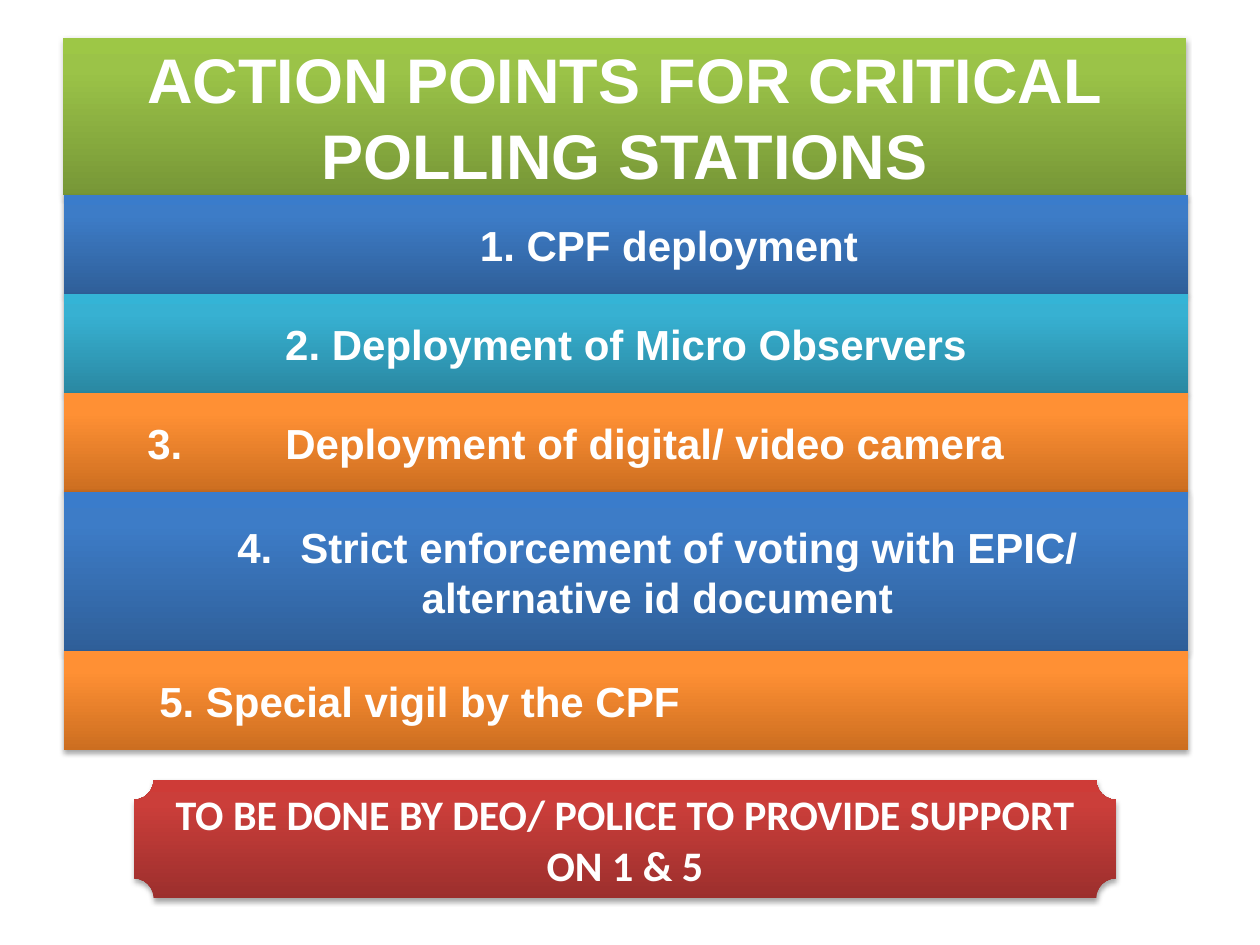
"""Build the slide of action points for critical polling stations."""
from copy import deepcopy

from lxml import etree
from pptx import Presentation
from pptx.dml.color import RGBColor
from pptx.enum.shapes import MSO_SHAPE
from pptx.enum.text import MSO_ANCHOR, MSO_AUTO_SIZE, PP_ALIGN
from pptx.oxml.ns import qn
from pptx.util import Emu, Pt

RECTANGLE, PLAQUE = MSO_SHAPE.RECTANGLE, MSO_SHAPE.PLAQUE
LEFT, CENTER = PP_ALIGN.LEFT, PP_ALIGN.CENTER
MIDDLE, NO_FIT = MSO_ANCHOR.MIDDLE, MSO_AUTO_SIZE.NONE
TITLE_ONLY = 5
EMU_PER_PX = 914400 / 126

WHITE = RGBColor(0xFF, 0xFF, 0xFF)
GREEN = RGBColor(0x77, 0x97, 0x37), RGBColor(0x9B, 0xC3, 0x48), RGBColor(0x9D, 0xC7, 0x46)
RED = RGBColor(0x9C, 0x2F, 0x2D), RGBColor(0xCB, 0x3E, 0x3A), RGBColor(0xCE, 0x3B, 0x37)
BLUE = RGBColor(0x2F, 0x5F, 0x99), RGBColor(0x3D, 0x7C, 0xC7), RGBColor(0x3A, 0x7C, 0xCB)
TEAL = RGBColor(0x2A, 0x88, 0xA2), RGBColor(0x37, 0xB1, 0xD2), RGBColor(0x34, 0xB4, 0xD6)
ORANGE = RGBColor(0xCC, 0x6E, 0x20), RGBColor(0xFF, 0x90, 0x34), RGBColor(0xFF, 0x91, 0x36)
STOP_POSITIONS = 0, 0.8, 1

BAR_LEFT, BAR_TOP, BAR_WIDTH = 64, 195, 1124
ACTIONS = [
    ("1. CPF deployment", BLUE, 99, dict(margin=86)),
    ("2. Deployment of Micro Observers", TEAL, 99, {}),
    ("3.\tDeployment of digital/ video camera", ORANGE, 99,
     dict(align=LEFT, margin=209, indent=-138)),
    ("4. \tStrict enforcement of voting with EPIC/ alternative id document",
     BLUE, 159, dict(margin=63)),
    ("5. Special vigil by the CPF", ORANGE, 99, dict(align=LEFT, margin=83)),
]


def px(length):
    """Turn pixels into EMU."""
    return Emu(round(length * EMU_PER_PX))


def place(shape, left, top, width, height):
    """Set the position and size of a shape."""
    shape.left, shape.top = px(left), px(top)
    shape.width, shape.height = px(width), px(height)


def add_shadow(shape):
    """Give a shape a soft shadow below it."""
    shape.shadow.inherit = False
    effects = shape.element.spPr.find(qn("a:effectLst"))
    shadow = etree.SubElement(effects, qn("a:outerShdw"), blurRad="40000",
                              dist="23000", dir="5400000", rotWithShape="0")
    color = etree.SubElement(shadow, qn("a:srgbClr"), val="000000")
    etree.SubElement(color, qn("a:alpha"), val="35000")


def paint(shape, colors):
    """Fill a shape with a three-stop gradient that rises from its bottom."""
    shape.line.fill.background()
    shape.fill.gradient()
    shape.fill.gradient_angle = 90
    stops = shape.element.spPr.find(".//" + qn("a:gsLst"))
    stops.append(deepcopy(stops[-1]))
    for stop, position, color in zip(shape.fill.gradient_stops, STOP_POSITIONS, colors):
        stop.position = position
        stop.color.rgb = color
    add_shadow(shape)


def write(shape, text, size=24, font="Arial", align=CENTER, margin=0, indent=0):
    """Write one bold white paragraph in the middle of a shape."""
    frame = shape.text_frame
    frame.word_wrap = True
    frame.auto_size = NO_FIT
    frame.vertical_anchor = MIDDLE
    para = frame.paragraphs[0]
    para.alignment = align
    properties = para._p.get_or_add_pPr()
    properties.set("marL", str(px(margin)))
    properties.set("indent", str(px(indent)))
    span = para.add_run()
    span.text = text
    span.font.name = font
    span.font.size = Pt(size)
    span.font.bold = True
    span.font.color.rgb = WHITE


def add_panel(page, kind, bounds, colors, text, **text_format):
    """Add a preset shape with a gradient and text."""
    panel = page.shapes.add_shape(kind, 0, 0, 0, 0)
    place(panel, *bounds)
    paint(panel, colors)
    write(panel, text, **text_format)


def add_title(page, text):
    """Format the title placeholder as a green banner."""
    title = page.shapes.title
    place(title, 63, 38, 1123, 157)
    paint(title, GREEN)
    write(title, text, size=36)


def add_actions(page):
    """Stack the action bars without gaps."""
    top = BAR_TOP
    for text, colors, height, text_format in ACTIONS:
        add_panel(page, RECTANGLE, (BAR_LEFT, top, BAR_WIDTH, height), colors,
                  text, **text_format)
        top += height


def main():
    """Build and save the deck."""
    deck = Presentation()
    deck.slide_width, deck.slide_height = px(1260), px(945)
    page = deck.slides.add_slide(deck.slide_layouts[TITLE_ONLY])
    add_title(page, "ACTION POINTS FOR CRITICAL POLLING STATIONS")
    add_panel(page, PLAQUE, (134, 780, 982, 118), RED,
              "TO BE DONE BY DEO/ POLICE TO PROVIDE SUPPORT ON 1 & 5", font="Calibri")
    add_actions(page)
    deck.save("out.pptx")


if __name__ == "__main__":
    main()
